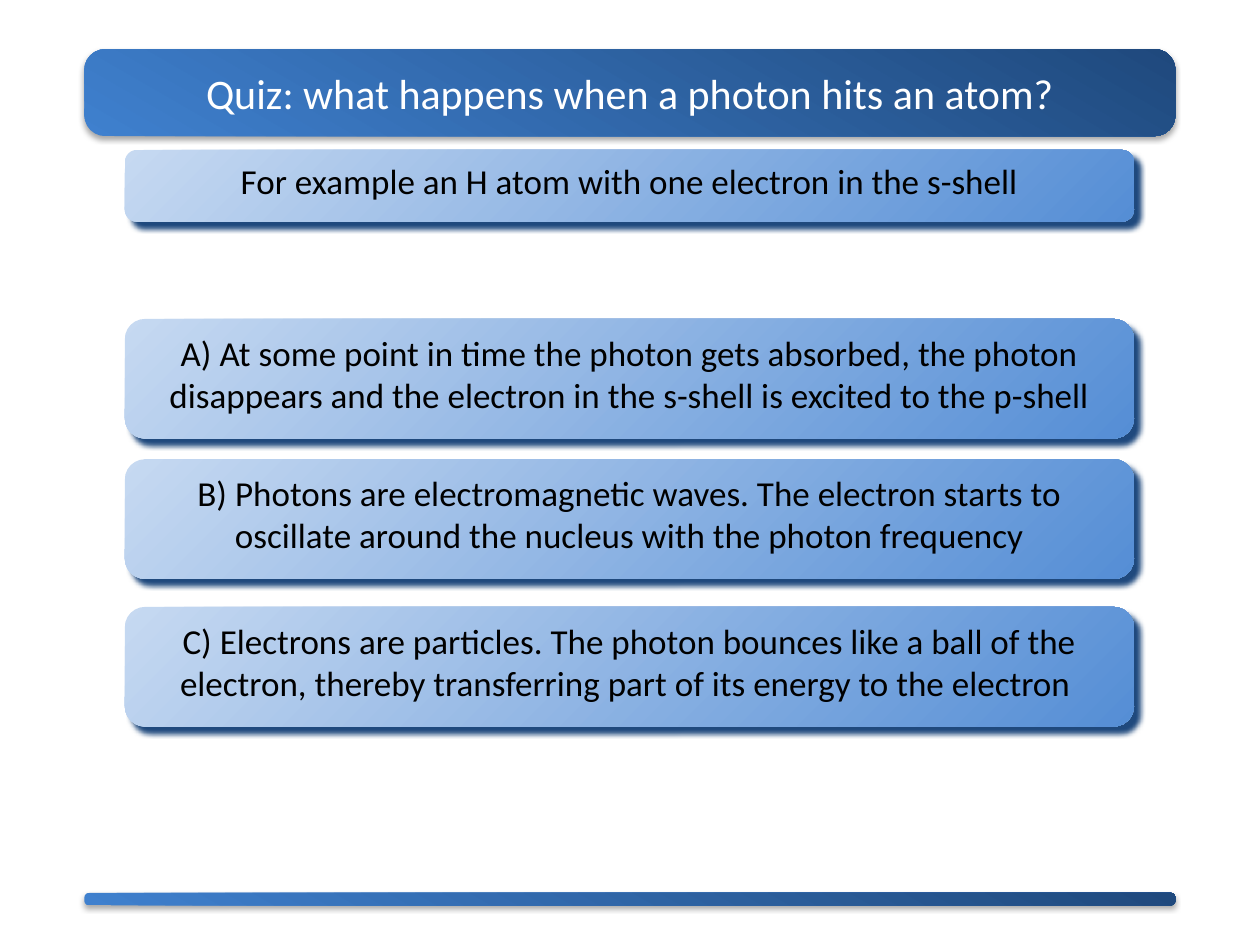
"""Build a quiz slide on what happens when a photon hits an atom."""
from lxml import etree
from pptx import Presentation
from pptx import util as u
from pptx.dml.color import RGBColor
from pptx.enum import shapes, text
from pptx.oxml.ns import qn

BLACK = RGBColor(0x00, 0x00, 0x00)
WHITE = RGBColor(0xFF, 0xFF, 0xFF)
PALE_BLUE = RGBColor(0xC6, 0xD9, 0xF1)
SKY_BLUE = RGBColor(0x55, 0x8E, 0xD5)
MID_BLUE = RGBColor(0x3F, 0x80, 0xCE)
NAVY = RGBColor(0x1F, 0x49, 0x7D)

BAR = {
    "left": 48.2, "width": 623.5, "colors": (MID_BLUE, NAVY), "angle": 60,
    "shadow": {"color": BLACK, "opacity": 35, "distance": 1.8, "direction": 90},
}
CARD = {
    "left": 71.3, "width": 576.7, "colors": (PALE_BLUE, SKY_BLUE), "angle": 315,
    "shadow": {"color": NAVY, "opacity": 100, "distance": 5, "direction": 45},
}
TITLE_FONT = {"name": "Calibri", "size": u.Pt(24), "color": WHITE}
CARD_FONT = {"name": "Calibri", "size": u.Pt(20), "color": BLACK}

TITLE = "Quiz: what happens when a photon hits an atom?"
EXAMPLE = "For example an H atom with one electron in the s-shell"
ANSWERS = (
    (182.2, "A) At some point in time the photon gets absorbed, the photon "
            "disappears and the electron in the s-shell is excited to the p-shell"),
    (262.4, "B) Photons are electromagnetic waves. The electron starts to "
            "oscillate around the nucleus with the photon frequency"),
    (346.8, "C) Electrons are particles. The photon bounces like a ball of the "
            "electron, thereby transferring part of its energy to the electron "),
)


def add_shadow(shape, color, opacity, distance, direction):
    """Give the shape a soft outer shadow."""
    shape.shadow.inherit = False
    effects = shape._element.spPr.find(qn("a:effectLst"))
    shadow = etree.SubElement(effects, qn("a:outerShdw"), {
        "blurRad": str(u.Pt(3.1)), "dist": str(u.Pt(distance)),
        "dir": str(direction * 60000), "algn": "ctr", "rotWithShape": "0",
    })
    shade = etree.SubElement(shadow, qn("a:srgbClr"), val=str(color))
    etree.SubElement(shade, qn("a:alpha"), val=str(opacity * 1000))


def add_panel(slide, style, top, height, rounding):
    """Add a rounded panel with a gradient fill and a shadow."""
    shape = slide.shapes.add_shape(
        shapes.MSO_SHAPE.ROUNDED_RECTANGLE,
        u.Pt(style["left"]), u.Pt(top), u.Pt(style["width"]), u.Pt(height))
    shape.adjustments[0] = rounding
    shape.fill.gradient()
    shape.fill.gradient_angle = style["angle"]
    for stop, color, position in zip(shape.fill.gradient_stops, style["colors"], (0, 1)):
        stop.color.rgb = color
        stop.position = position
    shape.line.fill.background()
    add_shadow(shape, **style["shadow"])
    return shape


def write_text(shape, words, font_format, anchor):
    """Write one centred paragraph into the shape."""
    frame = shape.text_frame
    frame.word_wrap = True
    frame.vertical_anchor = anchor
    paragraph = frame.paragraphs[0]
    paragraph.alignment = text.PP_ALIGN.CENTER
    run = paragraph.add_run()
    run.text = words
    for name, value in font_format.items():
        if name == "color":
            run.font.color.rgb = value
        else:
            setattr(run.font, name, value)


def add_card(slide, top, height, words):
    """Add a light blue card with its text at the top."""
    card = add_panel(slide, CARD, top, height, 0.17)
    write_text(card, words, CARD_FONT, text.MSO_ANCHOR.TOP)


def main():
    """Build and save the slide."""
    presentation = Presentation()
    presentation.slide_width, presentation.slide_height = u.Pt(720), u.Pt(540)
    slide = presentation.slides.add_slide(presentation.slide_layouts[6])
    title_bar = add_panel(slide, BAR, 28.1, 49.7, 0.24)
    write_text(title_bar, TITLE, TITLE_FONT, text.MSO_ANCHOR.MIDDLE)
    add_panel(slide, BAR, 510.2, 7.2, 0.38)
    add_card(slide, 85.7, 41, EXAMPLE)
    for top, answer in ANSWERS:
        add_card(slide, top, 68.4, answer)
    presentation.save("out.pptx")


if __name__ == "__main__":
    main()
